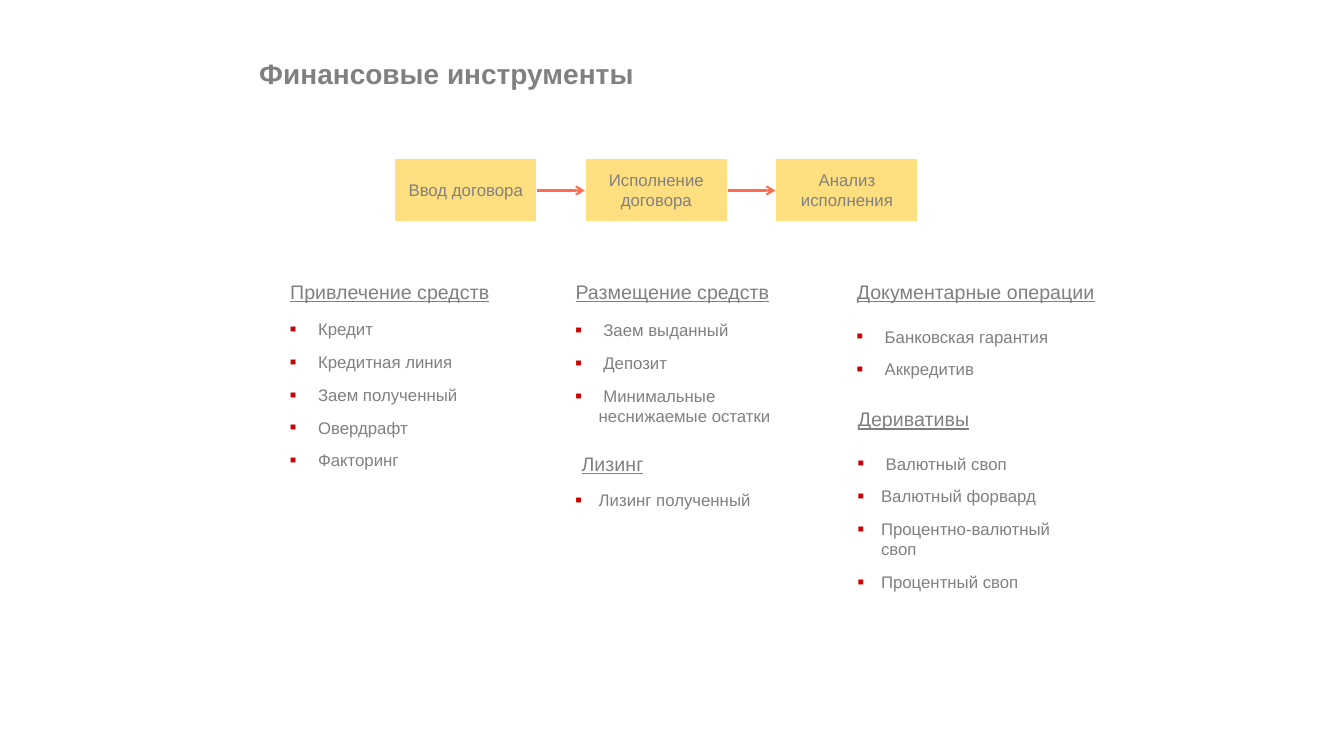
from dataclasses import dataclass

from lxml.etree import SubElement
from pptx import Presentation
from pptx.dml.color import RGBColor
from pptx.dml.fill import FillFormat
from pptx.enum.shapes import MSO_CONNECTOR, MSO_SHAPE
from pptx.enum.text import MSO_ANCHOR, MSO_AUTO_SIZE, PP_ALIGN
from pptx.oxml.ns import qn
from pptx.shapes.autoshape import Shape
from pptx.slide import Slide
from pptx.text.text import Font, _Paragraph
from pptx.util import Pt

PX = 9144
FONT = "Arial"
COLORS = {
    "text": "808080",
    "step": "FFC000",
    "arrow": "FC6E51",
    "bullet": "CC0000",
    "white": "FFFFFF",
}

STEPS = ["Ввод договора", "Исполнение договора", "Анализ исполнения"]
STEP_LEFT, STEP_TOP, STEP_WIDTH, STEP_HEIGHT = 391, 157, 142, 63
STEP_PITCH = 189
LIST_WIDTH = 215
HEADING_HEIGHT = 34
BULLET_INDENT = 23


@dataclass(frozen=True)
class Box:
    left: int
    top: int
    width: int
    height: int

    def emu(self) -> tuple[int, int, int, int]:
        return self.left * PX, self.top * PX, self.width * PX, self.height * PX


@dataclass(frozen=True)
class InstrumentGroup:
    heading: str
    heading_box: Box
    wrap: bool
    items: list[str]
    list_box: Box


GROUPS = [
    InstrumentGroup(
        "Привлечение средств", Box(278, 273, 219, HEADING_HEIGHT), False,
        [" Кредит", " Кредитная линия", " Заем полученный", " Овердрафт", " Факторинг"],
        Box(278, 307, LIST_WIDTH, 169),
    ),
    InstrumentGroup(
        "Размещение средств", Box(561, 273, 215, HEADING_HEIGHT), False,
        [" Заем выданный", " Депозит", " Минимальные неснижаемые остатки"],
        Box(561, 307, LIST_WIDTH, 126),
    ),
    InstrumentGroup(
        "Лизинг", Box(567, 443, 82, HEADING_HEIGHT), False,
        ["Лизинг полученный"],
        Box(561, 476, LIST_WIDTH, 40),
    ),
    InstrumentGroup(
        "Документарные операции", Box(840, 273, 284, HEADING_HEIGHT), True,
        [" Банковская гарантия", " Аккредитив"],
        Box(840, 307, LIST_WIDTH, 86),
    ),
    InstrumentGroup(
        "Деривативы", Box(841, 399, 214, HEADING_HEIGHT), True,
        [" Валютный своп", "Валютный форвард", "Процентно-валютный своп", "Процентный своп"],
        Box(841, 434, LIST_WIDTH, 169),
    ),
]


def color(name: str) -> RGBColor:
    return RGBColor.from_string(COLORS[name])


def format_font(font: Font, size: int) -> None:
    font.name = FONT
    font.size = Pt(size)
    font.color.rgb = color("text")


def fill_translucent(fill: FillFormat, shape: Shape, name: str, percent: int) -> None:
    fill.solid()
    fill.fore_color.rgb = color(name)
    rgb = shape._element.spPr.find(qn("a:solidFill")).find(qn("a:srgbClr"))
    SubElement(rgb, qn("a:alpha"), val=str(percent * 1000))


def add_panel(slide: Slide, box: Box, fill: str, opacity: int, line_width: float) -> Shape:
    shape = slide.shapes.add_shape(MSO_SHAPE.RECTANGLE, *box.emu())
    shape.shadow.inherit = False
    fill_translucent(shape.fill, shape, fill, opacity)
    shape.line.color.rgb = color("white")
    shape.line.width = Pt(line_width)
    shape.text_frame.word_wrap = True
    shape.text_frame.vertical_anchor = MSO_ANCHOR.MIDDLE
    return shape


def add_title(slide: Slide) -> None:
    title = slide.shapes.title
    title.left, title.top, title.width, title.height = Box(247, 17, 703, 118).emu()
    frame = title.text_frame
    frame.text = "Финансовые инструменты"
    frame.auto_size = MSO_AUTO_SIZE.NONE
    frame.vertical_anchor = MSO_ANCHOR.MIDDLE
    paragraph = frame.paragraphs[0]
    paragraph.alignment = PP_ALIGN.LEFT
    paragraph.line_spacing = 0.8
    format_font(paragraph.font, 20)
    paragraph.font.bold = True


def add_step(slide: Slide, index: int, text: str) -> None:
    box = Box(STEP_LEFT + index * STEP_PITCH, STEP_TOP, STEP_WIDTH, STEP_HEIGHT)
    frame = add_panel(slide, box, "step", 50, 1.5).text_frame
    frame.text = text
    paragraph = frame.paragraphs[0]
    paragraph.alignment = PP_ALIGN.CENTER
    format_font(paragraph.font, 12)


def add_arrow(slide: Slide, index: int) -> None:
    end = STEP_LEFT + index * STEP_PITCH
    start = end - STEP_PITCH + STEP_WIDTH
    middle = STEP_TOP + STEP_HEIGHT // 2 + 1
    arrow = slide.shapes.add_connector(
        MSO_CONNECTOR.STRAIGHT, start * PX, middle * PX, end * PX, middle * PX
    )
    arrow.line.color.rgb = color("arrow")
    arrow.line.width = Pt(1.5)
    SubElement(arrow.line._get_or_add_ln(), qn("a:tailEnd"), type="arrow")
    SubElement(arrow._element.spPr, qn("a:effectLst"))


def add_bullet(paragraph: _Paragraph) -> None:
    properties = paragraph._p.get_or_add_pPr()
    properties.set("marL", str(BULLET_INDENT * PX))
    properties.set("indent", str(-BULLET_INDENT * PX))
    bullet_color = SubElement(properties, qn("a:buClr"))
    SubElement(bullet_color, qn("a:srgbClr"), val=COLORS["bullet"])
    SubElement(properties, qn("a:buSzPct"), val="60000")
    SubElement(properties, qn("a:buFont"), typeface=FONT)
    SubElement(properties, qn("a:buChar"), char="■")


def add_group(slide: Slide, group: InstrumentGroup) -> None:
    frame = add_panel(slide, group.list_box, "white", 30, 0.25).text_frame
    frame.text = "\n".join(group.items)
    for index, paragraph in enumerate(frame.paragraphs):
        add_bullet(paragraph)
        paragraph.alignment = PP_ALIGN.LEFT
        if index:
            paragraph.space_before = Pt(9)
        format_font(paragraph.font, 12)

    heading = slide.shapes.add_textbox(*group.heading_box.emu()).text_frame
    heading.text = group.heading
    heading.word_wrap = group.wrap
    heading.auto_size = MSO_AUTO_SIZE.SHAPE_TO_FIT_TEXT
    font = heading.paragraphs[0].font
    format_font(font, 14)
    font.underline = True


def main() -> None:
    presentation = Presentation()
    presentation.slide_width = 1333 * PX
    presentation.slide_height = 750 * PX
    slide = presentation.slides.add_slide(presentation.slide_layouts.get_by_name("Title Only"))
    add_title(slide)
    for index, text in enumerate(STEPS):
        add_step(slide, index, text)
        if index:
            add_arrow(slide, index)
    for group in GROUPS:
        add_group(slide, group)
    presentation.save("out.pptx")


if __name__ == "__main__":
    main()
